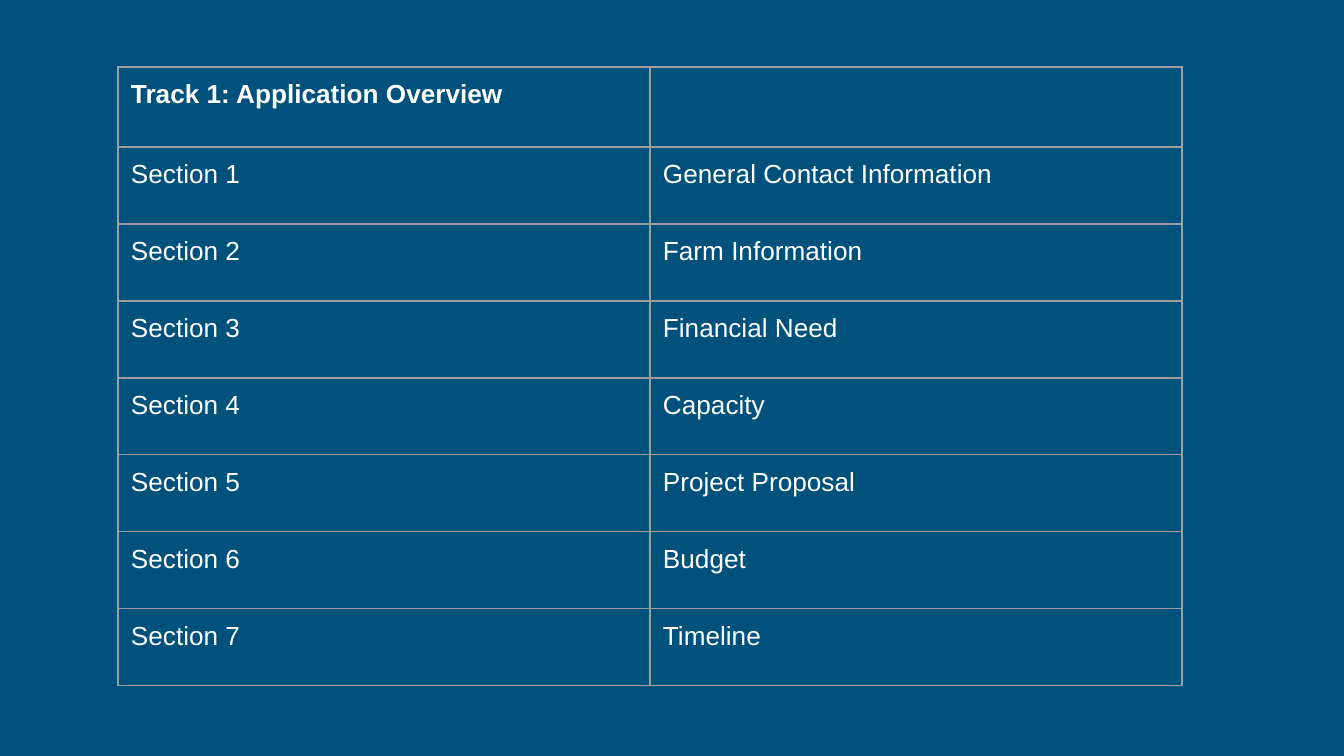
"""Build the Track 1 application overview slide."""
from lxml.etree import SubElement
from pptx import Presentation
from pptx.dml.color import RGBColor
from pptx.oxml.ns import qn
from pptx.util import Pt

PX = 914400 / 134.4
MARGIN = 13
HEADER_HEIGHT, ROW_HEIGHT, COLUMN_WIDTH = 80, 77, 532
BACKGROUND, BORDER, TEXT = "00517C", "9E9E9E", "FFFFFF"
SECTIONS = [
    "General Contact Information",
    "Farm Information",
    "Financial Need",
    "Capacity",
    "Project Proposal",
    "Budget",
    "Timeline",
]


def px(length):
    return round(length * PX)


def color(code):
    return RGBColor.from_string(code)


deck = Presentation()
deck.slide_width, deck.slide_height = px(1344), px(756)
page = deck.slides.add_slide(deck.slide_layouts[6])
page.background.fill.solid()
page.background.fill.fore_color.rgb = color(BACKGROUND)

rows = [("Track 1: Application Overview", "")]
rows += [(f"Section {number}", name) for number, name in enumerate(SECTIONS, 1)]

table_height = HEADER_HEIGHT + ROW_HEIGHT * len(SECTIONS)
frame = page.shapes.add_table(
    len(rows), 2, px(118), px(67), px(2 * COLUMN_WIDTH), px(table_height)
)
table = frame.table
table.horz_banding = False
for column in table.columns:
    column.width = px(COLUMN_WIDTH)

for row_index, row in enumerate(rows):
    is_header = row_index == 0
    table.rows[row_index].height = px(HEADER_HEIGHT if is_header else ROW_HEIGHT)
    for column_index, label in enumerate(row):
        cell = table.cell(row_index, column_index)
        cell.margin_left = cell.margin_right = px(MARGIN)
        cell.margin_top = cell.margin_bottom = px(MARGIN)
        cell.text = label
        font = cell.text_frame.paragraphs[0].font
        font.name, font.size, font.bold = "Arial", Pt(14), is_header
        font.color.rgb = color(TEXT)

        properties = cell._tc.get_or_add_tcPr()
        for side in ("a:lnL", "a:lnR", "a:lnT", "a:lnB"):
            line = SubElement(properties, qn(side), w=str(Pt(0.75)))
            line_fill = SubElement(line, qn("a:solidFill"))
            SubElement(line_fill, qn("a:srgbClr"), val=BORDER)
        cell.fill.background()

deck.save("out.pptx")
